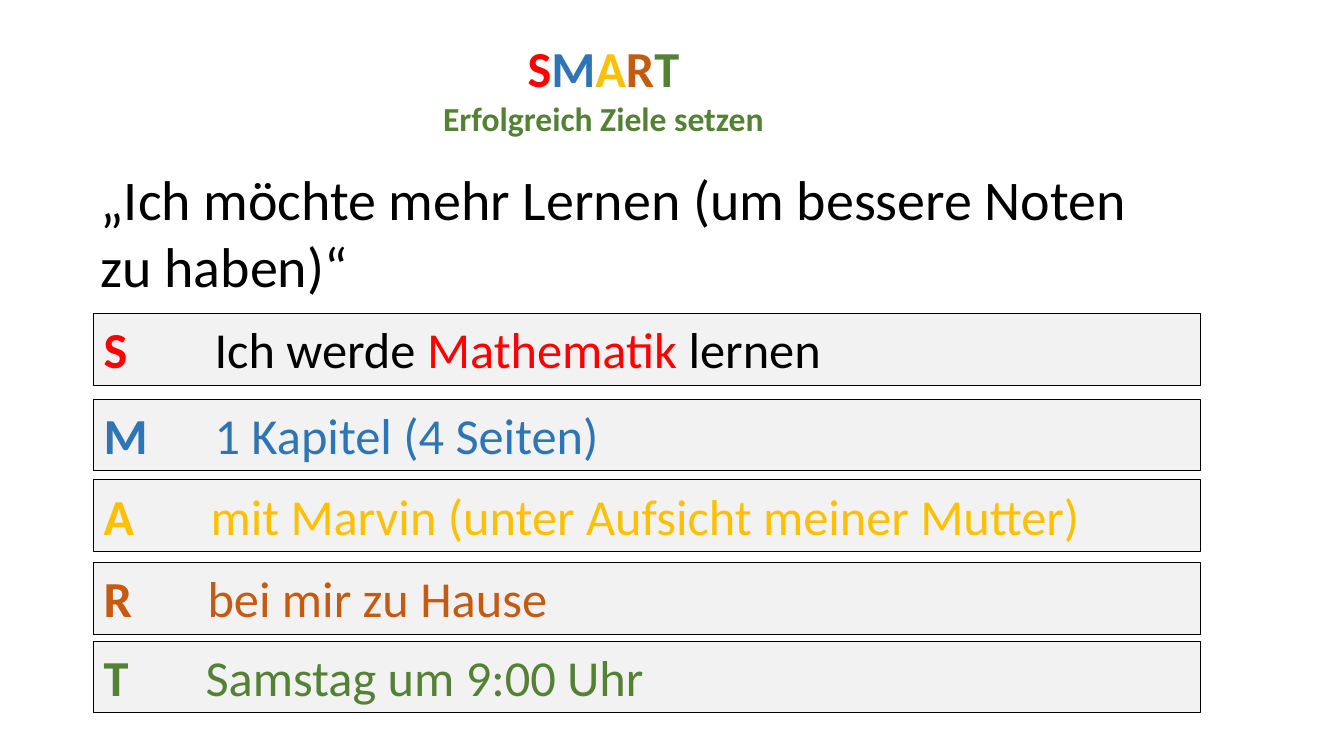
from dataclasses import dataclass

from lxml.etree import SubElement
from pptx import Presentation
from pptx.dml.color import RGBColor
from pptx.enum.shapes import MSO_SHAPE
from pptx.enum.text import MSO_ANCHOR, PP_ALIGN
from pptx.oxml.ns import qn
from pptx.util import Inches, Pt


@dataclass(frozen=True)
class Theme:
    font: str = "Calibri"
    black: str = "000000"
    red: str = "FF0000"
    blue: str = "2E75B6"
    yellow: str = "FFC000"
    orange: str = "C55A11"
    green: str = "548235"
    bar_fill: str = "F2F2F2"
    quote_size: int = 40
    goal_size: int = 36
    subtitle_size: int = 24


THEME = Theme()

GOALS = [
    ("S", THEME.red, 3.11, 1.1, [
        ("Ich werde ", THEME.black),
        ("Mathematik ", THEME.red),
        ("lernen", THEME.black),
    ]),
    ("M", THEME.blue, 3.96, 1.1, [("1 Kapitel (4 Seiten)", THEME.blue)]),
    ("A", THEME.yellow, 4.76, 1.06,
     [("mit Marvin (unter Aufsicht meiner Mutter)", THEME.yellow)]),
    ("R", THEME.orange, 5.58, 1.03, [("bei mir zu Hause", THEME.orange)]),
    ("T", THEME.green, 6.36, 1.01, [("Samstag um 9:00 Uhr", THEME.green)]),
]


def add_run(paragraph, text, size, color, bold=False):
    run = paragraph.add_run()
    run.text = text
    run.font.name = THEME.font
    run.font.size = Pt(size)
    run.font.bold = bold
    run.font.color.rgb = RGBColor.from_string(color)


def add_text_box(slide, left, top, width, height):
    text_box = slide.shapes.add_textbox(
        Inches(left), Inches(top), Inches(width), Inches(height))
    text_box.text_frame.word_wrap = True
    return text_box.text_frame


def add_tab_stop(paragraph, position):
    properties = paragraph._p.get_or_add_pPr()
    tab_list = SubElement(properties, qn("a:tabLst"))
    SubElement(tab_list, qn("a:tab"), pos=str(Inches(position)), algn="l")


def add_title(slide):
    text_frame = add_text_box(slide, 4.1, 0.47, 3.77, 0.95)
    text_frame.vertical_anchor = MSO_ANCHOR.BOTTOM
    paragraph = text_frame.paragraphs[0]
    paragraph.alignment = PP_ALIGN.CENTER
    for letter, color, *_ in GOALS:
        add_run(paragraph, letter, THEME.goal_size, color, bold=True)
    paragraph.add_line_break()
    add_run(paragraph, "Erfolgreich Ziele setzen", THEME.subtitle_size,
            THEME.green, bold=True)


def add_quote(slide):
    text_frame = add_text_box(slide, 0.9, 1.58, 10.63, 1.45)
    add_run(text_frame.paragraphs[0],
            "„Ich möchte mehr Lernen (um bessere Noten zu haben)“",
            THEME.quote_size, THEME.black)


def add_goal_bar(slide, letter, color, top, tab_position, parts):
    bar = slide.shapes.add_shape(
        MSO_SHAPE.RECTANGLE,
        Inches(0.93), Inches(top), Inches(10.98), Inches(0.71))
    bar.shadow.inherit = False
    bar.fill.solid()
    bar.fill.fore_color.rgb = RGBColor.from_string(THEME.bar_fill)
    bar.line.color.rgb = RGBColor.from_string(THEME.black)
    bar.line.width = Pt(0.5)
    bar.text_frame.word_wrap = True
    bar.text_frame.vertical_anchor = MSO_ANCHOR.TOP
    paragraph = bar.text_frame.paragraphs[0]
    paragraph.alignment = PP_ALIGN.LEFT
    add_tab_stop(paragraph, tab_position)
    add_run(paragraph, f"{letter}\t", THEME.goal_size, color, bold=True)
    for text, part_color in parts:
        add_run(paragraph, text, THEME.goal_size, part_color)


def main():
    presentation = Presentation()
    presentation.slide_width = Inches(13.33)
    presentation.slide_height = Inches(7.5)
    slide = presentation.slides.add_slide(presentation.slide_layouts[6])
    add_quote(slide)
    for goal in GOALS:
        add_goal_bar(slide, *goal)
    add_title(slide)
    presentation.save("out.pptx")


if __name__ == "__main__":
    main()
